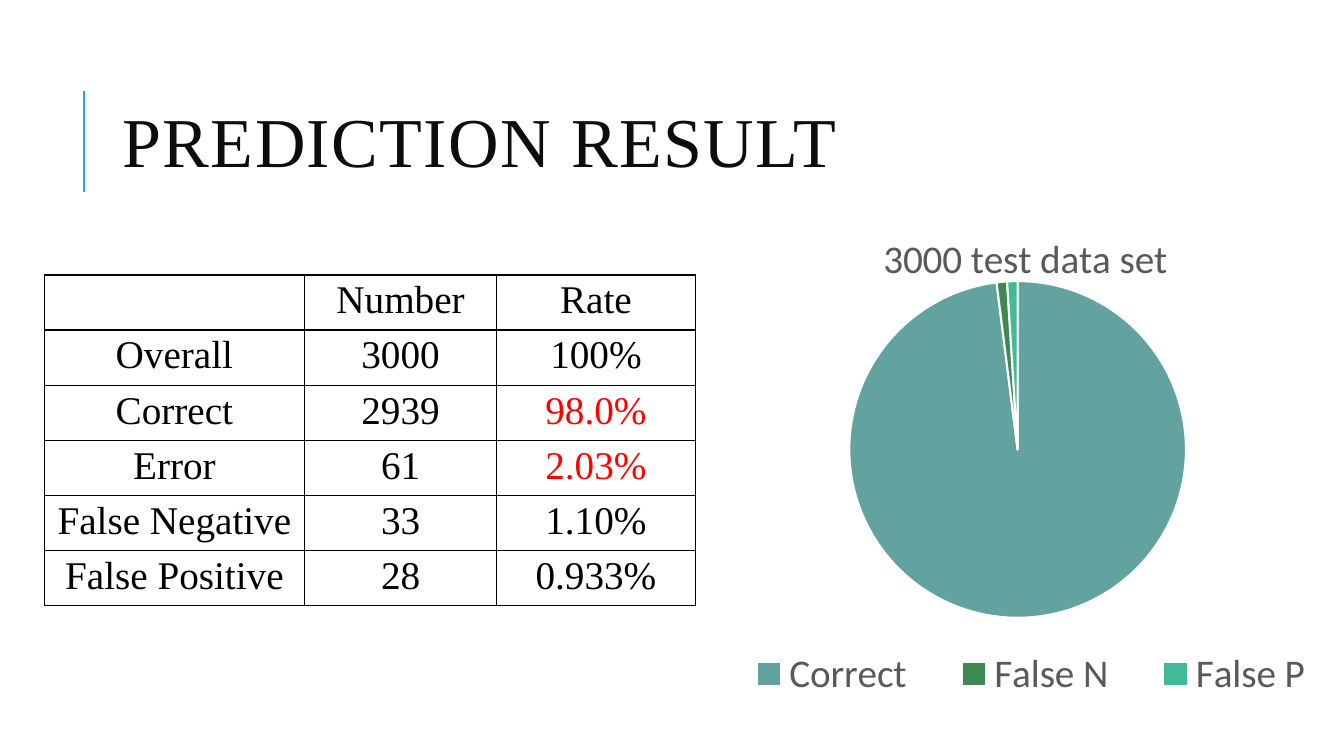
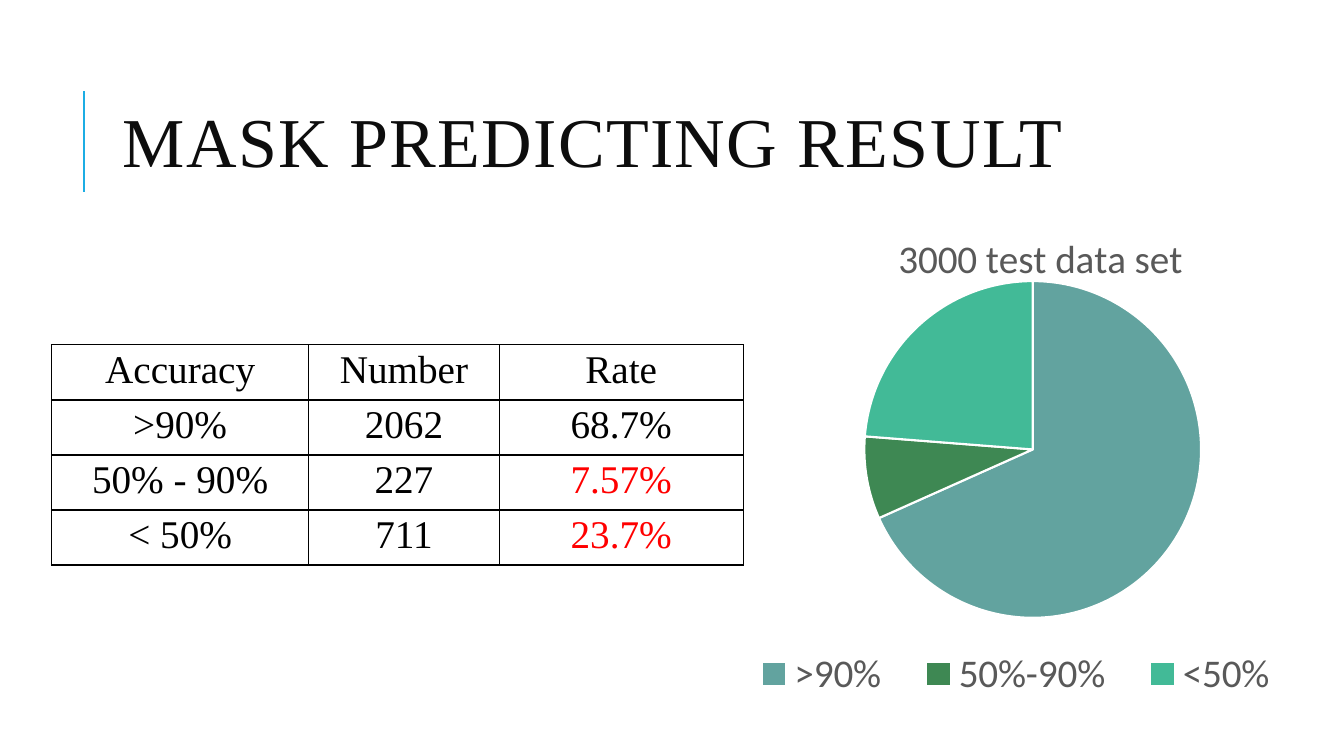
from lxml import etree
from pptx import Presentation
from pptx.chart.data import CategoryChartData
from pptx.dml.color import RGBColor
from pptx.enum.chart import XL_CHART_TYPE as ChartType, XL_LEGEND_POSITION as LegendPos
from pptx.enum.shapes import MSO_CONNECTOR as Connector
from pptx.enum.text import MSO_ANCHOR as Anchor, PP_ALIGN as Align
from pptx.oxml import parse_xml
from pptx.oxml.ns import nsdecls, qn
from pptx.util import Cm, Pt

BLACK = RGBColor(0x00, 0x00, 0x00)
WHITE = RGBColor(0xFF, 0xFF, 0xFF)
RED = RGBColor(0xFF, 0x00, 0x00)
TITLE_INK = RGBColor(0x0D, 0x0D, 0x0D)
ACCENT = RGBColor(0x1C, 0xAD, 0xE4)
CHART_INK = RGBColor(0x59, 0x59, 0x59)
SLICES = (RGBColor(0x62, 0xA3, 0x9F), RGBColor(0x3E, 0x88, 0x53), RGBColor(0x42, 0xBA, 0x97))
SERIF, SANS = "Times New Roman", "Calibri"
BODY_SIZE = Pt(28)
ROW_HEIGHT = 1.35


def style_font(font, name, size, color):
    font.name, font.size, font.bold = name, size, False
    font.color.rgb = color


def add_title(s, text, left=2.84, top=1.63, width=27, height=4.17):
    """Title with the thin accent rule to its left."""
    rule_x = Cm(left - 0.73)
    rule = s.shapes.add_connector(Connector.STRAIGHT, rule_x, Cm(top + 3.2),
                                  rule_x, Cm(top + 0.66))
    rule.line.color.rgb, rule.line.width = ACCENT, Pt(1.5)
    etree.SubElement(rule._element.spPr, qn("a:effectLst"))

    tf = s.shapes.add_textbox(Cm(left), Cm(top), Cm(width), Cm(height)).text_frame
    tf.word_wrap, tf.vertical_anchor = True, Anchor.MIDDLE
    p = tf.paragraphs[0]
    p.line_spacing = 0.8
    r = p.add_run()
    r.text = text
    style_font(p.font, SERIF, Pt(50), TITLE_INK)
    r._r.get_or_add_rPr().set("spc", "100")


def add_borders(cell):
    tcPr = cell._tc.get_or_add_tcPr()
    for i, side in enumerate("LRTB"):
        tcPr.insert(i, parse_xml(
            f'<a:ln{side} {nsdecls("a")} w="{Pt(1)}"><a:solidFill>'
            f'<a:srgbClr val="{BLACK}"/></a:solidFill></a:ln{side}>'))


def add_result_table(s, left, top, widths, rows, red_rows):
    """Bordered table; the last column is red in red_rows."""
    table = s.shapes.add_table(len(rows), len(widths), Cm(left), Cm(top), Cm(sum(widths)),
                               Cm(ROW_HEIGHT * len(rows))).table
    table.first_row = table.horz_banding = False
    for column, width in zip(table.columns, widths):
        column.width = Cm(width)
    for i, row in enumerate(rows):
        table.rows[i].height = Cm(ROW_HEIGHT)
        for j, text in enumerate(row):
            cell = table.cell(i, j)
            cell.margin_top = cell.margin_bottom = Cm(0.1)
            cell.fill.background()
            add_borders(cell)
            p = cell.text_frame.paragraphs[0]
            p.alignment = Align.CENTER
            if text:
                p.add_run().text = text
            is_red = i in red_rows and j == len(row) - 1
            style_font(p.font, SERIF, BODY_SIZE, RED if is_red else BLACK)


def place(part, x, y, w=None, h=None, inner=False):
    """Fix a chart part at fractions of the chart's box."""
    for old in part.findall(qn("c:layout")):
        part.remove(old)
    values = {"xMode": "edge", "yMode": "edge", "x": x, "y": y}
    if inner:
        values = {"layoutTarget": "inner", **values}
    if w is not None:
        values.update(w=w, h=h)
    items = "".join(f'<c:{k} val="{v}"/>' for k, v in values.items())
    layout = parse_xml(f'<c:layout {nsdecls("c")}><c:manualLayout>{items}'
                       '</c:manualLayout></c:layout>')
    overlay = part.find(qn("c:overlay"))
    if overlay is None:
        part.insert(0, layout)
    else:
        overlay.addprevious(layout)


def add_pie(s, left, shares, legend_width, top=4.34, width=16.97, height=14.71):
    data = CategoryChartData()
    data.categories = list(shares)
    data.add_series("Series 1", list(shares.values()))
    chart = s.shapes.add_chart(ChartType.PIE, Cm(left), Cm(top), Cm(width), Cm(height),
                               data).chart
    style_font(chart.font, SANS, Pt(10), BLACK)

    chart.has_title = True
    p = chart.chart_title.text_frame.paragraphs[0]
    p.add_run().text = "3000 test data set"
    style_font(p.font, SANS, BODY_SIZE, CHART_INK)
    place(chart.chart_title._element, 0.27, 0.09)

    chart.has_legend = True
    legend = chart.legend
    legend.position, legend.include_in_layout = LegendPos.BOTTOM, False
    style_font(legend.font, SANS, BODY_SIZE, CHART_INK)
    place(legend._element, 0.03, 0.8, legend_width, 0.12)

    plot = chart.plots[0]
    plot.vary_by_categories = True
    place(chart._chartSpace.chart.plotArea, 0.23, 0.1, 0.5, 0.75, inner=True)
    for i, color in enumerate(SLICES):
        fmt = plot.series[0].points[i].format
        fmt.fill.solid()
        fmt.fill.fore_color.rgb = color
        fmt.line.color.rgb, fmt.line.width = WHITE, Pt(1.5)


def add_result_slide(prs, title, table, pie):
    s = prs.slides.add_slide(prs.slide_layouts[6])
    add_title(s, title)
    add_result_table(s, **table)
    add_pie(s, **pie)


def main():
    prs = Presentation()
    prs.slide_width, prs.slide_height = Cm(33.87), Cm(19.05)
    add_result_slide(
        prs, "PREDICTION RESULT",
        table=dict(left=1.12, top=6.93, widths=(6.55, 4.85, 5), red_rows=(2, 3), rows=(
            ("", "Number", "Rate"),
            ("Overall", "3000", "100%"),
            ("Correct", "2939", "98.0%"),
            ("Error", "61", "2.03%"),
            ("False Negative", "33", "1.10%"),
            ("False Positive", "28", "0.933%"))),
        pie=dict(left=17.5, shares={"Correct": 98, "False N": 1, "False P": 1},
                 legend_width=0.94))
    add_result_slide(
        prs, "MASK PREDICTING RESULT",
        table=dict(left=1.3, top=8.69, widths=(6.48, 4.8, 6.15), red_rows=(2, 3), rows=(
            ("Accuracy", "Number", "Rate"),
            (">90%", "2062", "68.7%"),
            ("50% - 90%", "227", "7.57%"),
            ("< 50%", "711", "23.7%"))),
        pie=dict(left=17.88, shares={">90%": 69, "50%-90%": 8, "<50%": 24},
                 legend_width=0.85))
    prs.save("out.pptx")


if __name__ == "__main__":
    main()
